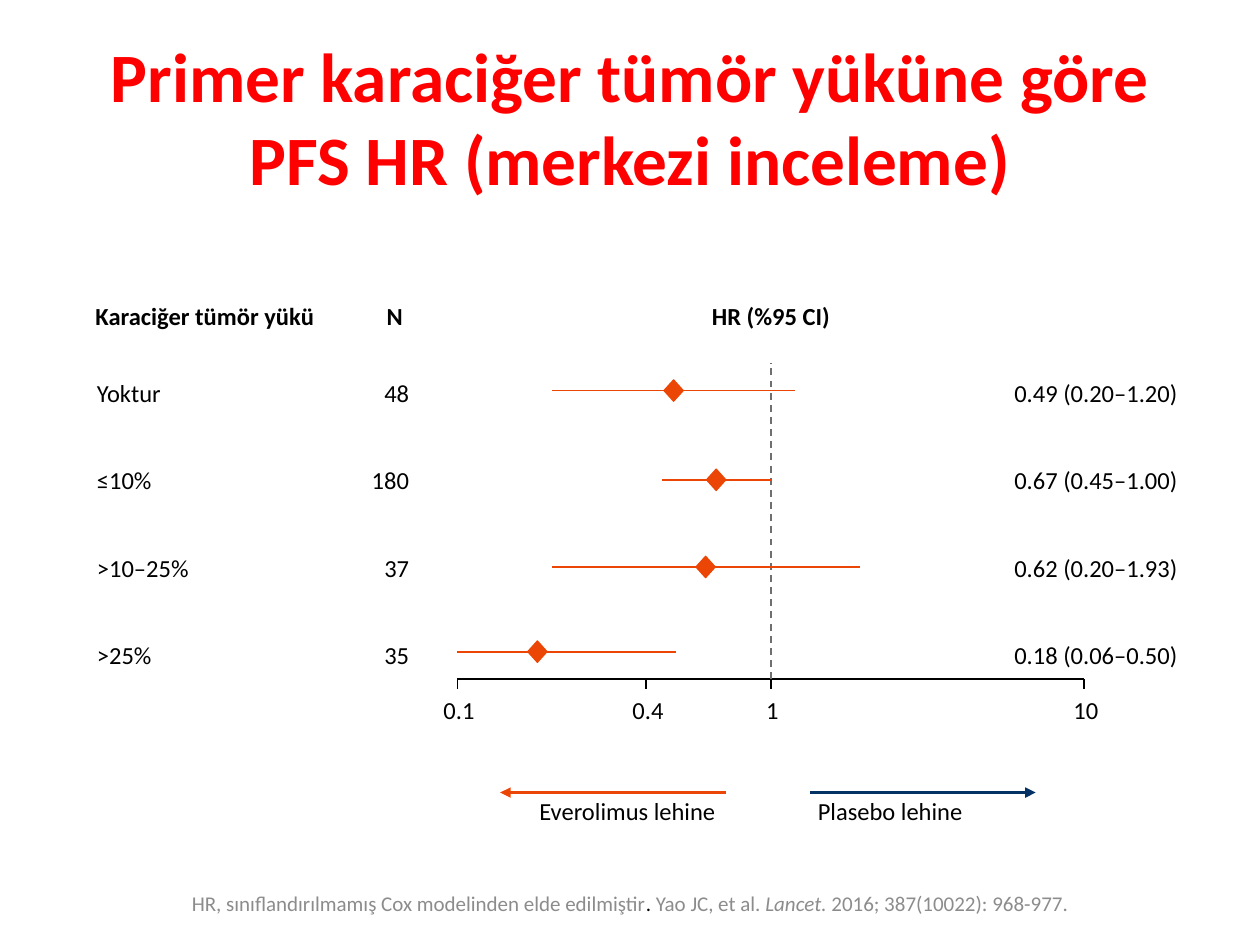
"""Builds a forest plot slide of PFS hazard ratios by liver tumour burden."""
import math

import pptx
import pptx.dml.color
import pptx.enum.dml
import pptx.enum.shapes
import pptx.enum.text
import pptx.oxml
import pptx.oxml.ns
import pptx.util

Pt = pptx.util.Pt
ALIGN = pptx.enum.text.PP_ALIGN
MIDDLE = pptx.enum.text.MSO_ANCHOR.MIDDLE
AUTO_SIZE = pptx.enum.text.MSO_AUTO_SIZE

BLACK, GREY, RED = "000000", "8C8C8C", "FF0000"
ORANGE, NAVY, DASH_GREY = "EC4606", "043265", "706F6F"

AXIS_LEFT, AXIS_TOP, DECADE, AXIS_MIN = 261.4, 388.1, 179, 0.1
FIRST_ROW, ROW_STEP = 216, 50
COUNT_RIGHT, DIGIT_WIDTH = 233.8, 7.5


def rgb(color):
    return pptx.dml.color.RGBColor.from_string(color)


def axis_x(ratio):
    return AXIS_LEFT + DECADE * math.log10(max(ratio, AXIS_MIN) / AXIS_MIN)


class ForestSlide:
    def __init__(self, slide, font="Calibri", size=14):
        self.slide = slide
        self.font = font
        self.size = size

    def style(self, run, size, color, bold=False, italic=False):
        run.font.name = self.font
        run.font.size = Pt(size)
        run.font.bold = bold
        run.font.italic = italic
        run.font.color.rgb = rgb(color)

    def title(self, text, left, top, width, height):
        heading = self.slide.shapes.title
        heading.left, heading.top = Pt(left), Pt(top)
        heading.width, heading.height = Pt(width), Pt(height)
        frame = heading.text_frame
        frame.text = text
        frame.auto_size = AUTO_SIZE.NONE
        frame.vertical_anchor = MIDDLE
        frame.paragraphs[0].alignment = ALIGN.CENTER
        self.style(frame.paragraphs[0].runs[0], 39.6, RED, bold=True)

    def label(self, text, left, top, width, bold=False, wrap=False, align=ALIGN.LEFT):
        box = self.slide.shapes.add_textbox(Pt(left), Pt(top), Pt(width), Pt(17))
        frame = box.text_frame
        frame.margin_left = frame.margin_right = 0
        frame.margin_top = frame.margin_bottom = 0
        frame.word_wrap = wrap
        frame.auto_size = AUTO_SIZE.SHAPE_TO_FIT_TEXT
        frame.text = text
        frame.paragraphs[0].alignment = align
        self.style(frame.paragraphs[0].runs[0], self.size, BLACK, bold)

    def footnote(self, parts, left, top, width, height):
        box = self.slide.shapes.add_textbox(Pt(left), Pt(top), Pt(width), Pt(height))
        frame = box.text_frame
        frame.word_wrap = True
        frame.vertical_anchor = MIDDLE
        citation = frame.paragraphs[0]
        citation.alignment = ALIGN.CENTER
        for text, color, italic in parts:
            run = citation.add_run()
            run.text = text
            self.style(run, 12, color, italic=italic)

    def line(self, x1, y1, x2, y2, color=BLACK, width=1, dashed=False, arrow=False):
        rule = self.slide.shapes.add_connector(
            pptx.enum.shapes.MSO_CONNECTOR.STRAIGHT, Pt(x1), Pt(y1), Pt(x2), Pt(y2))
        rule.line.color.rgb = rgb(color)
        rule.line.width = Pt(width)
        if dashed:
            rule.line.dash_style = pptx.enum.dml.MSO_LINE.DASH
        properties = rule._element.spPr
        if arrow:
            head = pptx.oxml.parse_xml(
                f'<a:tailEnd {pptx.oxml.ns.nsdecls("a")} type="triangle"/>')
            properties.find(pptx.oxml.ns.qn("a:ln")).append(head)
        properties.append(
            pptx.oxml.parse_xml(f'<a:effectLst {pptx.oxml.ns.nsdecls("a")}/>'))

    def diamond(self, x, y, width=11, height=12.2):
        marker = self.slide.shapes.add_shape(
            pptx.enum.shapes.MSO_SHAPE.DIAMOND,
            Pt(x - width / 2), Pt(y - height / 2), Pt(width), Pt(height))
        marker.shadow.inherit = False
        marker.fill.solid()
        marker.fill.fore_color.rgb = rgb(ORANGE)
        marker.line.color.rgb = rgb(ORANGE)
        marker.line.width = Pt(0.75)


def main():
    deck = pptx.Presentation()
    deck.slide_width, deck.slide_height = Pt(720), Pt(540)
    forest = ForestSlide(deck.slides.add_slide(deck.slide_layouts[5]))

    forest.title("Primer karaciğer tümör yüküne göre PFS HR (merkezi inceleme)",
                 36, 21.6, 648, 90)

    for heading, left, width in [("Karaciğer tümör yükü", 54.5, 126),
                                 ("N", 221, 9.4), ("HR (%95 CI)", 406.8, 67.7)]:
        forest.label(heading, left, 172, width, bold=True)

    forest.line(axis_x(0.1), AXIS_TOP, axis_x(10), AXIS_TOP)
    forest.line(axis_x(1), AXIS_TOP, axis_x(1), 207.4, DASH_GREY, dashed=True)
    for tick, left, width in [("0.1", 253.4, 18), ("0.4", 361.4, 18),
                              ("1", 437.8, 7.5), ("10", 613.4, 14.6)]:
        x = axis_x(float(tick))
        forest.line(x, AXIS_TOP, x, AXIS_TOP + 5.6)
        forest.label(tick, left, 397.4, width)

    subgroups = [
        ("Yoktur", 36.7, "48", 0.49, 0.20, 1.20, 223.2),
        ("≤10%", 31.7, "180", 0.67, 0.45, 1.00, 274.2),
        (">10–25%", 52.6, "37", 0.62, 0.20, 1.93, 324),
        (">25%", 31.7, "35", 0.18, 0.06, 0.50, 372.4),
    ]
    for row, (burden, width, patients, ratio, low, high, y) in enumerate(subgroups):
        top = FIRST_ROW + row * ROW_STEP
        count_width = DIGIT_WIDTH * len(patients)
        forest.label(burden, 55.4, top, width)
        forest.label(patients, COUNT_RIGHT - count_width, top, count_width,
                     align=ALIGN.RIGHT)
        forest.label(f"{ratio:.2f} ({low:.2f}–{high:.2f})", 579.6, top, 94.3)
        for bound in (low, high):
            forest.line(axis_x(ratio), y, axis_x(bound), y, ORANGE)
        forest.diamond(axis_x(ratio), y)

    forest.label("Everolimus lehine", 299.5, 455, 118, wrap=True, align=ALIGN.CENTER)
    forest.label("Plasebo lehine", 467.3, 455, 118, wrap=True)
    forest.line(414.7, 452.9, 285.8, 452.9, ORANGE, 1.5, arrow=True)
    forest.line(463, 452.9, 591.8, 452.9, NAVY, 1.5, arrow=True)

    forest.footnote([
        ("HR, sınıflandırılmamış Cox modelinden elde edilmiştir", GREY, False),
        (". ", BLACK, False),
        ("Yao JC, et al. ", GREY, False),
        ("Lancet.", GREY, True),
        (" 2016; 387(10022): 968-977.", GREY, False),
    ], 36.7, 502.6, 646.6, 26.6)

    deck.save("out.pptx")


if __name__ == "__main__":
    main()
